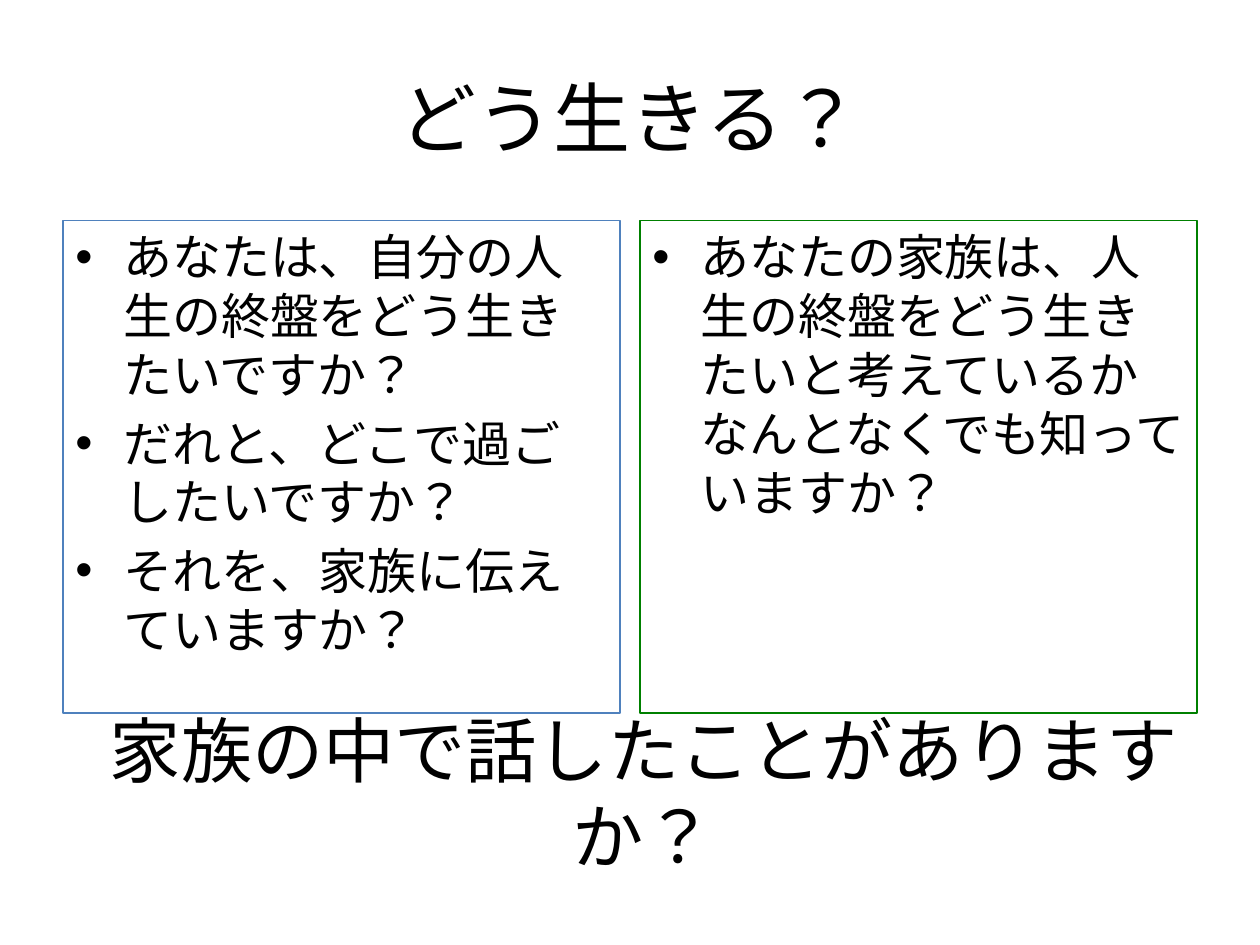
from lxml import etree
from pptx import Presentation
from pptx.dml.color import RGBColor
from pptx.enum.lang import MSO_LANGUAGE_ID
from pptx.enum.shapes import MSO_SHAPE
from pptx.enum.text import MSO_ANCHOR, PP_ALIGN
from pptx.oxml.ns import qn
from pptx.util import Inches, Pt

RECT = MSO_SHAPE.RECTANGLE
TOP, MIDDLE = MSO_ANCHOR.TOP, MSO_ANCHOR.MIDDLE
LEFT, CENTER = PP_ALIGN.LEFT, PP_ALIGN.CENTER
JAPANESE = MSO_LANGUAGE_ID.JAPANESE

COLORS = {"text": "000000", "self": "4F81BD", "family": "008000"}
FONT = "Calibri"
WIDE, HIGH = 10, 7.5
EDGE, GAP = 0.5, 0.16
HEAD, BODY, FOOT = 0.3, 1.75, 5.66  # tops of the three rows
BAND = 1.25                         # height of title and closing line
INDENT = 0.38
SIZE = 28

PANELS = [
    ("self", ["あなたは、自分の人生の終盤をどう生きたいですか？",
              "だれと、どこで過ごしたいですか？",
              "それを、家族に伝えていますか？"]),
    ("family", ["あなたの家族は、人生の終盤をどう生きたいと考えているか"
                "なんとなくでも知っていますか？"]),
]


def color(name):
    return RGBColor.from_string(COLORS[name])


def add_run(para, text, size):
    run = para.add_run()
    run.text = text
    run.font.size = Pt(size)
    run.font.name = FONT
    run.font.language_id = JAPANESE  # Japanese glyphs and line breaks
    run.font.color.rgb = color("text")


def add_bullet(para):
    props = para._p.get_or_add_pPr()
    props.set("marL", str(Inches(INDENT)))
    props.set("indent", str(-Inches(INDENT)))
    etree.SubElement(props, qn("a:buFont")).set("typeface", "Arial")
    etree.SubElement(props, qn("a:buChar")).set("char", "•")


def put_line(shape, box, text, size):
    """Large centred text that wraps inside its box."""
    shape.left, shape.top, shape.width, shape.height = map(Inches, box)
    frame = shape.text_frame
    frame.word_wrap = True
    frame.vertical_anchor = MIDDLE
    para = frame.paragraphs[0]
    para.alignment = CENTER
    # Keep the closing mark inside the margin
    para._p.get_or_add_pPr().set("hangingPunct", "0")
    add_run(para, text, size)


def put_panel(slide, box, name, items):
    """Outlined box with a bulleted list."""
    shape = slide.shapes.add_shape(RECT, *map(Inches, box))
    shape.shadow.inherit = False
    shape.fill.background()
    shape.line.color.rgb = color(name)
    shape.line.width = Pt(0.75)
    frame = shape.text_frame
    frame.word_wrap = True
    frame.vertical_anchor = TOP
    for i, item in enumerate(items):
        para = frame.add_paragraph() if i else frame.paragraphs[0]
        para.alignment = LEFT
        para.space_before = Pt(0.2 * SIZE)
        add_bullet(para)
        add_run(para, item, SIZE)


def main():
    deck = Presentation()
    deck.slide_width, deck.slide_height = Inches(WIDE), Inches(HIGH)
    slide = deck.slides.add_slide(deck.slide_layouts[5])
    full = WIDE - 2 * EDGE

    # Title
    put_line(slide.shapes.title, (EDGE, HEAD, full, BAND), "どう生きる？", 44)

    # Two equal columns
    col = (full - GAP) / 2
    for i, (name, items) in enumerate(PANELS):
        box = (EDGE + i * (col + GAP), BODY, col, FOOT - BODY)
        put_panel(slide, box, name, items)

    # Closing question
    box = (0.42, FOOT, 9.38, BAND)
    note = slide.shapes.add_textbox(*map(Inches, box))
    put_line(note, box, "家族の中で話したことがありますか？", 40.7)

    deck.save("out.pptx")


if __name__ == "__main__":
    main()
